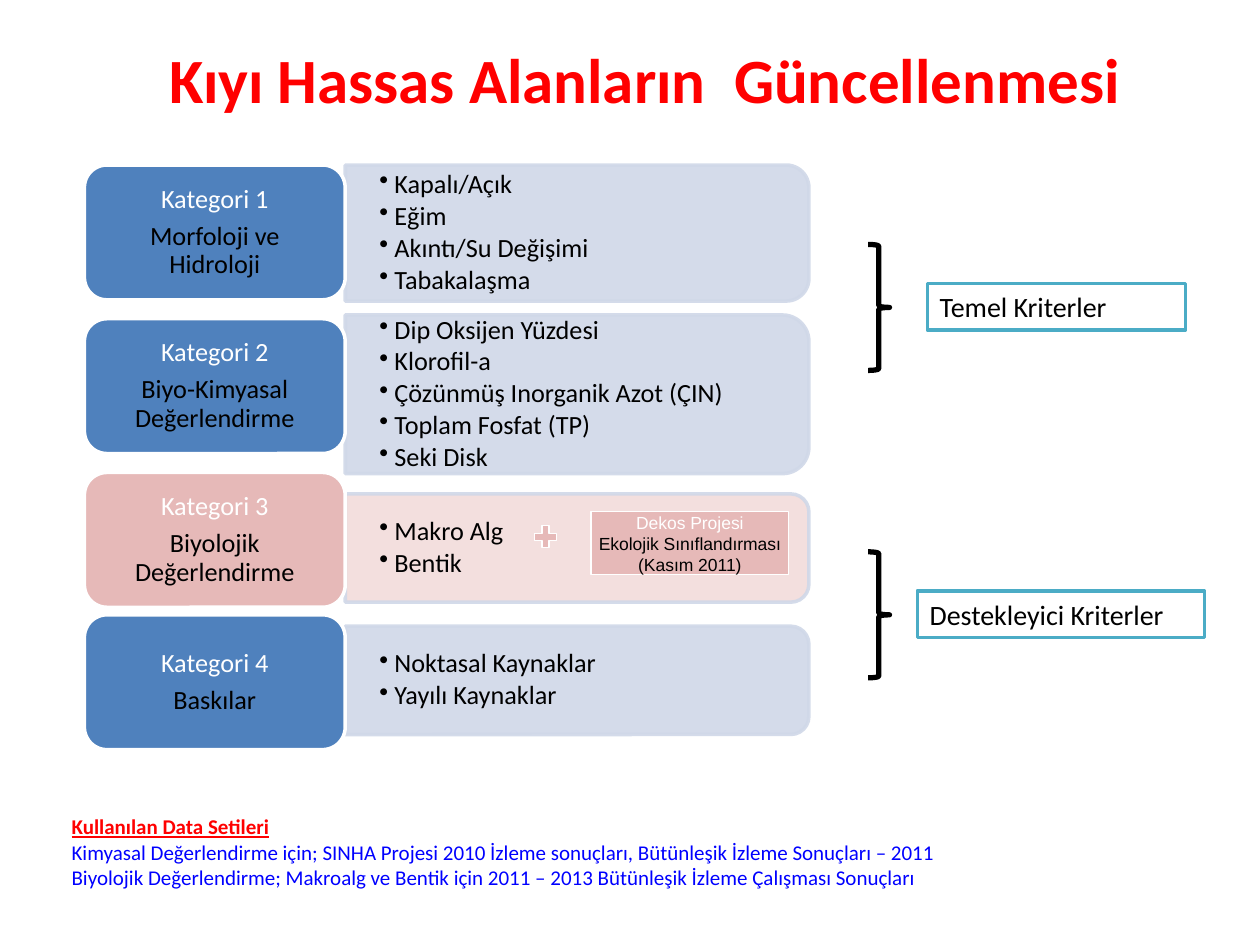
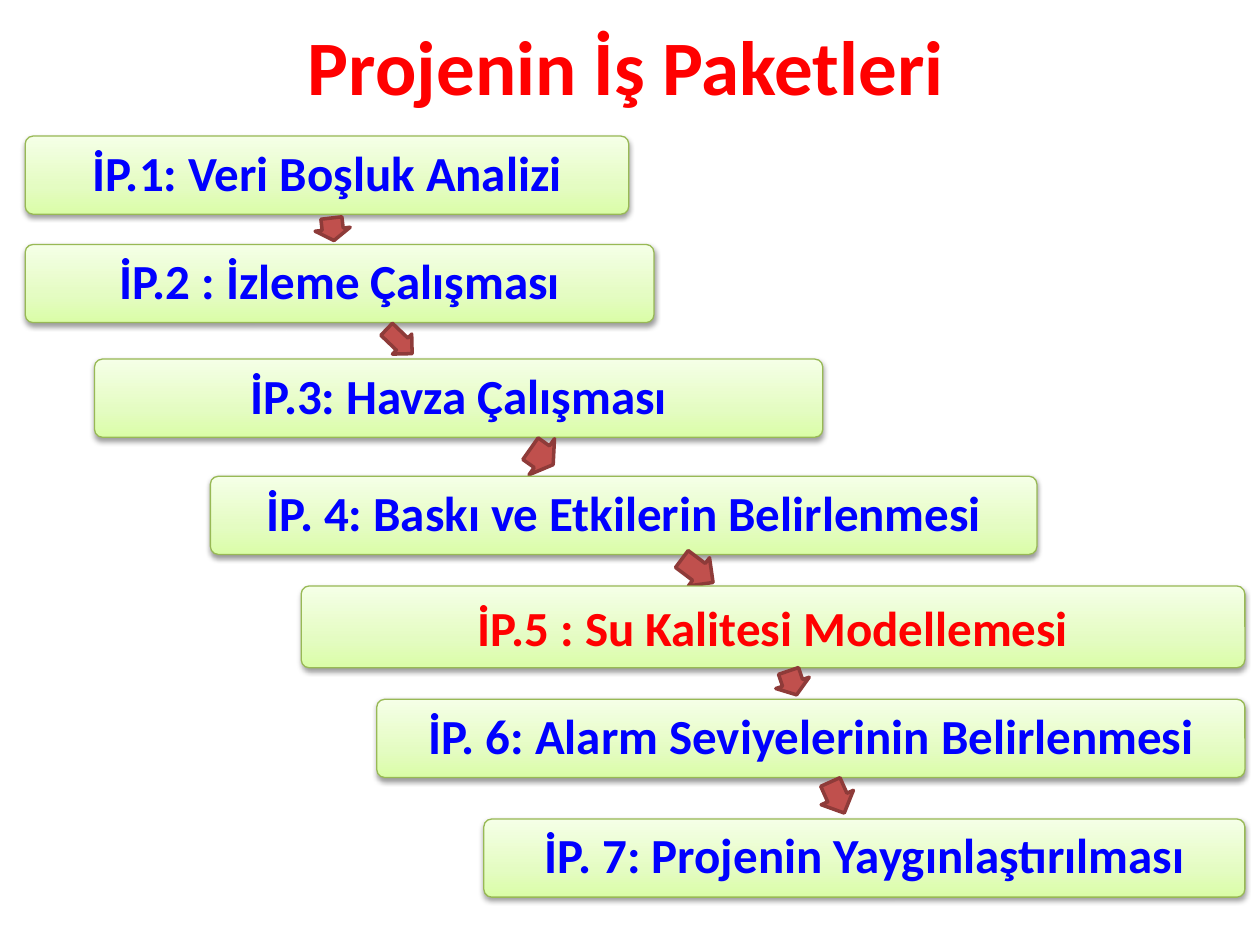
from pptx import Presentation
from pptx.dml.color import RGBColor
from pptx.enum.shapes import MSO_SHAPE
from pptx.enum.text import MSO_ANCHOR, PP_ALIGN
from pptx.oxml import parse_xml
from pptx.oxml.ns import nsdecls, qn
from pptx.util import Inches, Pt

ROUND, RECT = MSO_SHAPE.ROUNDED_RECTANGLE, MSO_SHAPE.RECTANGLE
PANEL, PLUS = MSO_SHAPE.ROUND_2_SAME_RECTANGLE, MSO_SHAPE.MATH_PLUS
BRACE, ARROW = MSO_SHAPE.RIGHT_BRACE, MSO_SHAPE.RIGHT_ARROW
MID, TOP = MSO_ANCHOR.MIDDLE, MSO_ANCHOR.TOP
LEFT, CENTER = PP_ALIGN.LEFT, PP_ALIGN.CENTER

HUES = {
    "red": "FF0000", "blue": "0000FF", "black": "000000", "white": "FFFFFF",
    "steel": "4F81BD", "pale": "D0D8E8", "rose": "E6B9B8", "blush": "F2DCDB",
    "teal": "4BACC6", "brick": "C0504D", "wine": "8E3B39", "leaf": "98B955",
}
LEAF_STOPS = [(0, "DAFDA7"), (35, "E4FCC2"), (100, "F5FFE7")]

TITLES = [
    ("Kıyı Hassas Alanların  Güncellenmesi", 36, (0.62, 0, 9, 1.25)),
    ("Projenin İş Paketleri", 44, (0.47, -0.11, 9, 1.25)),
]

# name, topic, items, card top, panel middle, panel height, card hue, panel hue
ROWS = [
    ("Kategori 1", "Morfoloji ve Hidroloji",
     ["Kapalı/Açık", "Eğim", "Akıntı/Su Değişimi", "Tabakalaşma"],
     1.31, 1.85, 1.08, "steel", "pale"),
    ("Kategori 2", "Biyo-Kimyasal Değerlendirme",
     ["Dip Oksijen Yüzdesi", "Klorofil-a", "Çözünmüş Inorganik Azot (ÇIN)",
      "Toplam Fosfat (TP)", "Seki Disk"],
     2.53, 3.13, 1.26, "steel", "pale"),
    ("Kategori 3", "Biyolojik Değerlendirme", ["Makro Alg", "Bentik"],
     3.75, 4.35, 0.86, "rose", "blush"),
    ("Kategori 4", "Baskılar", ["Noktasal Kaynaklar", "Yayılı Kaynaklar"],
     4.88, 5.4, 0.86, "steel", "pale"),
]
CARD_X, CARD_W, CARD_H = 0.67, 2.07, 1.07
PANEL_X, PANEL_W = CARD_X + CARD_W, 3.68

GROUPS = [("Temel Kriterler", 1.94, 7.36, 2.05),
          ("Destekleyici Kriterler", 4.38, 7.28, 2.28)]
DATA = [
    ("Kullanılan Data Setileri", "red", True),
    ("Kimyasal Değerlendirme için; SINHA Projesi 2010 İzleme sonuçları, "
     "Bütünleşik İzleme Sonuçları – 2011", "blue", False),
    ("Biyolojik Değerlendirme; Makroalg ve Bentik için 2011 – 2013 "
     "Bütünleşik İzleme Çalışması Sonuçları", "blue", False),
]

# text, hue, left, top, width, height
STEPS = [
    ("İP.1: Veri Boşluk Analizi", "blue", 0.2, 1.08, 4.79, 0.62),
    ("İP.2 : İzleme Çalışması", "blue", 0.2, 1.94, 4.99, 0.62),
    ("İP.3: Havza Çalışması", "blue", 0.75, 2.85, 5.78, 0.62),
    ("İP. 4: Baskı ve Etkilerin Belirlenmesi", "blue", 1.67, 3.78, 6.56, 0.62),
    ("İP.5 : Su Kalitesi Modellemesi", "red", 2.39, 4.65, 7.49, 0.65),
    ("İP. 6: Alarm Seviyelerinin Belirlenmesi", "blue", 2.99, 5.55, 6.89, 0.62),
    ("İP. 7: Projenin Yaygınlaştırılması", "blue", 3.84, 6.5, 6.04, 0.62),
]
# left, top, width, height, angle
ARROWS = [
    (2.55, 1.68, 0.18, 0.28, 83.5), (3.03, 2.6, 0.28, 0.22, 43.7),
    (4.19, 3.45, 0.22, 0.35, 35.2), (5.38, 4.39, 0.31, 0.28, 36.9),
    (6.19, 5.28, 0.2, 0.28, 71.3), (6.51, 6.19, 0.27, 0.28, 65.9),
]


def rgb(hue):
    return RGBColor.from_string(HUES[hue])


def write(shape, lines, size, face="Calibri", align=LEFT, anchor=TOP,
          pad=(0.1, 0.05), bullet=False, **gaps):
    frame = shape.text_frame
    x, y = map(Inches, pad)
    form = {"word_wrap": True, "vertical_anchor": anchor, "margin_left": x,
            "margin_right": x, "margin_top": y, "margin_bottom": y}
    for key, val in form.items():
        setattr(frame, key, val)
    for i, (text, hue, *marks) in enumerate(lines):
        para = frame.paragraphs[0] if i == 0 else frame.add_paragraph()
        if bullet:
            props = para._p.get_or_add_pPr()
            props.set("marL", str(Inches(0.12)))
            props.set("indent", str(-Inches(0.12)))
            props.append(parse_xml(f'<a:buChar {nsdecls("a")} char="•"/>'))
        for key, val in {"alignment": align, **gaps}.items():
            setattr(para, key, val)
        run = para.add_run()
        run.text = text
        look = {"name": face, "size": Pt(size), "bold": "bold" in marks,
                "underline": "under" in marks}
        for key, val in look.items():
            setattr(run.font, key, val)
        run.font.color.rgb = rgb(hue)


def label(slide, box, lines, size, **form):
    shape = slide.shapes.add_textbox(*map(Inches, box))
    write(shape, lines, size, **form)


def draw(slide, kind, box, fill, line, width):
    shape = slide.shapes.add_shape(kind, *map(Inches, box))
    shape.shadow.inherit = False
    if fill:
        shape.fill.solid()
        shape.fill.fore_color.rgb = rgb(fill)
    else:
        shape.fill.background()
    shape.line.color.rgb = rgb(line)
    shape.line.width = Pt(width)
    return shape


def fade(shape):
    for tint in shape._element.spPr.iter(qn("a:srgbClr")):
        tint.append(parse_xml(f'<a:alpha {nsdecls("a")} val="90000"/>'))


def gloss(shape):
    props = shape._element.spPr
    stops = "".join(f'<a:gs pos="{at * 1000}"><a:srgbClr val="{tint}"/></a:gs>'
                    for at, tint in LEAF_STOPS)
    props.replace(props.find(qn("a:noFill")), parse_xml(
        f'<a:gradFill {nsdecls("a")} rotWithShape="1"><a:gsLst>{stops}</a:gsLst>'
        '<a:lin ang="16200000" scaled="0"/></a:gradFill>'))
    props.find(qn("a:effectLst")).append(parse_xml(
        f'<a:outerShdw {nsdecls("a")} blurRad="{Pt(3.1)}" dist="{Pt(1.6)}" '
        'dir="5400000" rotWithShape="0"><a:srgbClr val="000000">'
        '<a:alpha val="38000"/></a:srgbClr></a:outerShdw>'))


def start(deck, title):
    slide = deck.slides.add_slide(deck.slide_layouts[6])
    text, size, box = title
    label(slide, box, [(text, "red", "bold")], size, align=CENTER, anchor=MID)
    return slide


def criteria(slide):
    for name, topic, items, top, mid, high, hue, tint in ROWS:
        box = (PANEL_X + (PANEL_W - high) / 2, mid - PANEL_W / 2, high, PANEL_W)
        panel = draw(slide, PANEL, box, tint, "pale", 2)
        panel.rotation = 90
        fade(panel)
        label(slide, (PANEL_X, mid - high / 2 + 0.05, 3.62, high - 0.1),
              [(item, "black") for item in items], 15, anchor=MID,
              pad=(0.27, 0.14), bullet=True, line_spacing=0.9,
              space_after=Pt(2))
        card = draw(slide, ROUND, (CARD_X, top, CARD_W, CARD_H), hue, "white", 2)
        write(card, [(name, "white"), (topic, "black")], 15, align=CENTER,
              anchor=MID, pad=(0.11, 0.08), line_spacing=0.9,
              space_after=Pt(5))

    label(slide, (0.47, 6.41, 8.9, 0.71),
          [(text, hue, *(["bold", "under"] if head else []))
           for text, hue, head in DATA], 12)
    note = draw(slide, RECT, (4.69, 4.06, 1.57, 0.5), "rose", "white", 0.75)
    write(note, [("Dekos Projesi", "white"),
                 ("Ekolojik Sınıflandırması (Kasım 2011)", "black")],
          10, face="Arial", align=CENTER, pad=(0, 0))
    draw(slide, PLUS, (4.21, 4.14, 0.24, 0.24), "rose", "white", 0.75)

    for text, top, left, wide in GROUPS:
        draw(slide, BRACE, (6.89, top, 0.17, 1), None, "black", 3)
        tag = draw(slide, RECT, (left, top + 0.31, wide, 0.37),
                   "white", "teal", 2)
        write(tag, [(text, "black")], 16)


def steps(slide):
    for i, (text, hue, *box) in enumerate(STEPS):
        bar = draw(slide, ROUND, box, None, "leaf", 0.75)
        bar.adjustments[0] = 0.1
        gloss(bar)
        write(bar, [(text, hue, "bold")], 28, align=CENTER, anchor=MID,
              pad=(0.12, 0.12), line_spacing=1.0 if hue == "red" else 0.9)
        if i < len(ARROWS):
            *spot, turn = ARROWS[i]
            arrow = draw(slide, ARROW, spot, "brick", "wine", 2)
            arrow.adjustments[0] = 0.6
            arrow.adjustments[1] = 0.5
            arrow.rotation = turn


def main():
    deck = Presentation()
    deck.slide_width, deck.slide_height = Inches(10), Inches(7.5)
    for title, fill in zip(TITLES, (criteria, steps)):
        fill(start(deck, title))
    deck.save("out.pptx")


if __name__ == "__main__":
    main()
